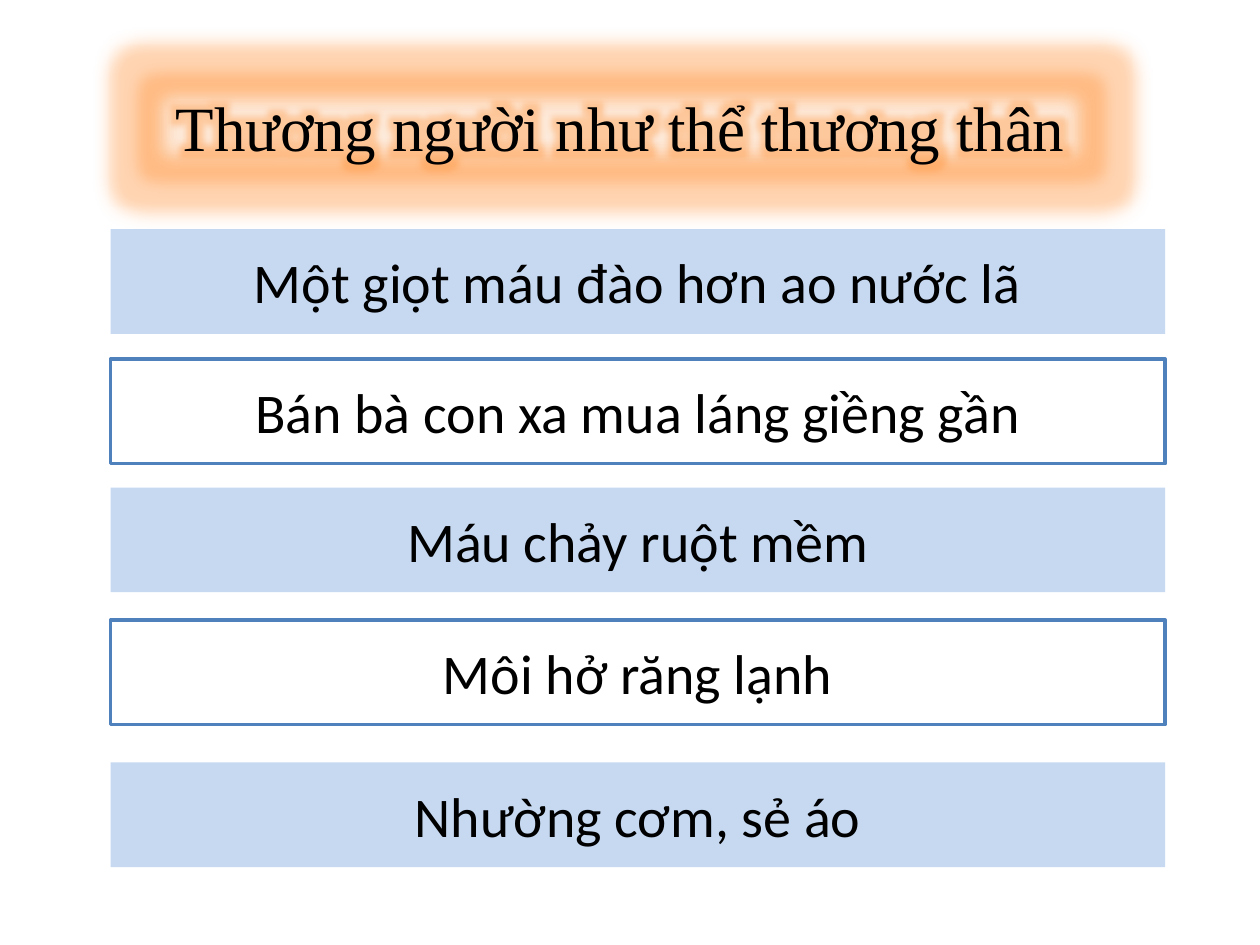
from dataclasses import dataclass

from lxml.etree import SubElement
from pptx import Presentation
from pptx.dml.color import RGBColor
from pptx.enum.shapes import MSO_SHAPE
from pptx.enum.text import MSO_ANCHOR, PP_ALIGN
from pptx.oxml.ns import qn
from pptx.util import Cm, Pt


@dataclass(frozen=True)
class Theme:
    """Colours, fonts and type sizes of the slide."""
    blue: str = "C6D9F1"
    white: str = "FFFFFF"
    edge: str = "4F81BD"
    cream: str = "FDEADA"
    glow: str = "F79646"
    ink: str = "000000"
    sans: str = "Calibri"
    serif: str = "Times New Roman"
    body: int = 32
    head: int = 36


THEME = Theme()
TITLE = "Một giọt máu đào hơn ao nước lã"
BARS = [
    ("Bán bà con xa mua láng giềng gần", 7.24, True),
    ("Máu chảy ruột mềm", 9.83, False),
    ("Môi hở răng lạnh", 12.5, True),
    ("Nhường cơm, sẻ áo", 15.37, False),
]


def apply(item, values):
    """Set each named value on an item."""
    for name, value in values.items():
        setattr(item, name, value)


def place(shape, left, top, width, height):
    """Move and size a shape in centimetres."""
    apply(shape, {"left": Cm(left), "top": Cm(top),
                  "width": Cm(width), "height": Cm(height)})


def paint(shape, fill):
    """Fill a shape with one colour."""
    shape.fill.solid()
    shape.fill.fore_color.rgb = RGBColor.from_string(fill)


def write(shape, text, font, size):
    """Put one centred line of text in a shape."""
    frame = shape.text_frame
    apply(frame, {"word_wrap": True, "vertical_anchor": MSO_ANCHOR.MIDDLE})
    line = frame.paragraphs[0]
    line.alignment = PP_ALIGN.CENTER
    run = line.add_run()
    run.text = text
    apply(run.font, {"name": font, "size": Pt(size)})
    run.font.color.rgb = RGBColor.from_string(THEME.ink)
    return run


def add_box(slide):
    """Add a plain rectangle without shadow or line."""
    shape = slide.shapes.add_shape(MSO_SHAPE.RECTANGLE, 0, 0, 0, 0)
    shape.shadow.inherit = False
    shape.line.fill.background()
    return shape


def style_bar(shape, text, top, framed=False):
    """Lay out one proverb bar, blue or white with a frame."""
    place(shape, 2.23, top, 21.26, 2.11)
    paint(shape, THEME.white if framed else THEME.blue)
    if framed:
        shape.line.color.rgb = RGBColor.from_string(THEME.edge)
        shape.line.width = Pt(2)
    write(shape, text, THEME.sans, THEME.body)


def add_glow(effects):
    """Add an orange glow to an effect list."""
    glow = SubElement(effects, qn("a:glow"), rad=str(Pt(18)))
    color = SubElement(glow, qn("a:srgbClr"), val=THEME.glow)
    SubElement(color, qn("a:satMod"), val="175000")
    SubElement(color, qn("a:alpha"), val="40000")


def add_banner(slide, text):
    """Add the glowing banner with soft edges."""
    shape = add_box(slide)
    place(shape, 2.97, 1.65, 19.08, 1.8)
    paint(shape, THEME.cream)
    run = write(shape, text, THEME.serif, THEME.head)
    effects = shape._element.spPr.find(qn("a:effectLst"))
    add_glow(effects)
    SubElement(effects, qn("a:softEdge"), rad=str(Pt(10)))
    props = run.font._element
    effects = SubElement(props, qn("a:effectLst"))
    props.find(qn("a:solidFill")).addnext(effects)
    add_glow(effects)


def main():
    """Build the slide of proverbs."""
    deck = Presentation()
    apply(deck, {"slide_width": Cm(25.4), "slide_height": Cm(19.05)})
    slide = deck.slides.add_slide(deck.slide_layouts[5])
    style_bar(slide.shapes.title, TITLE, 4.62)
    add_banner(slide, "Thương người như thể thương thân")
    for text, top, framed in BARS:
        style_bar(add_box(slide), text, top, framed)
    deck.save("out.pptx")


if __name__ == "__main__":
    main()
